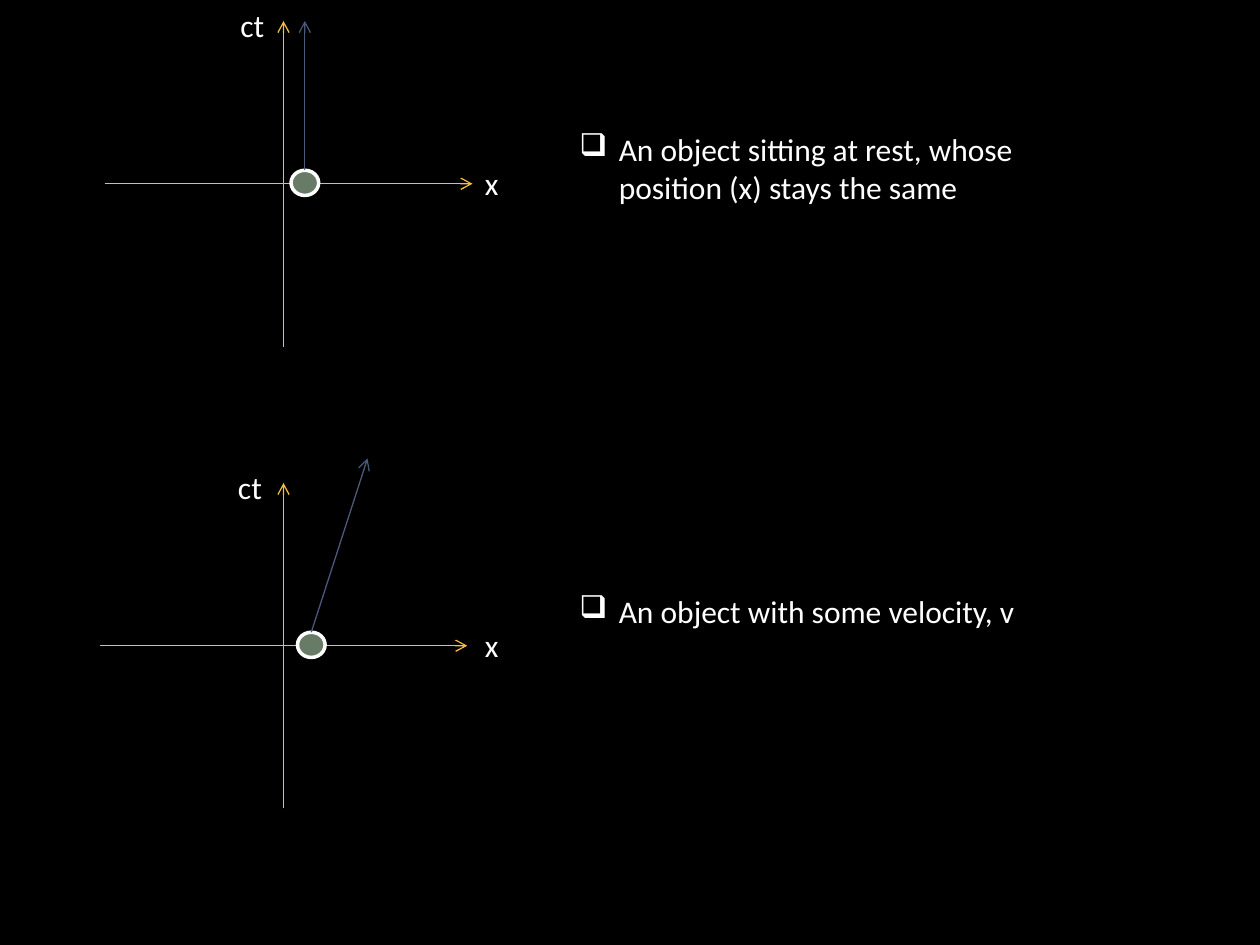
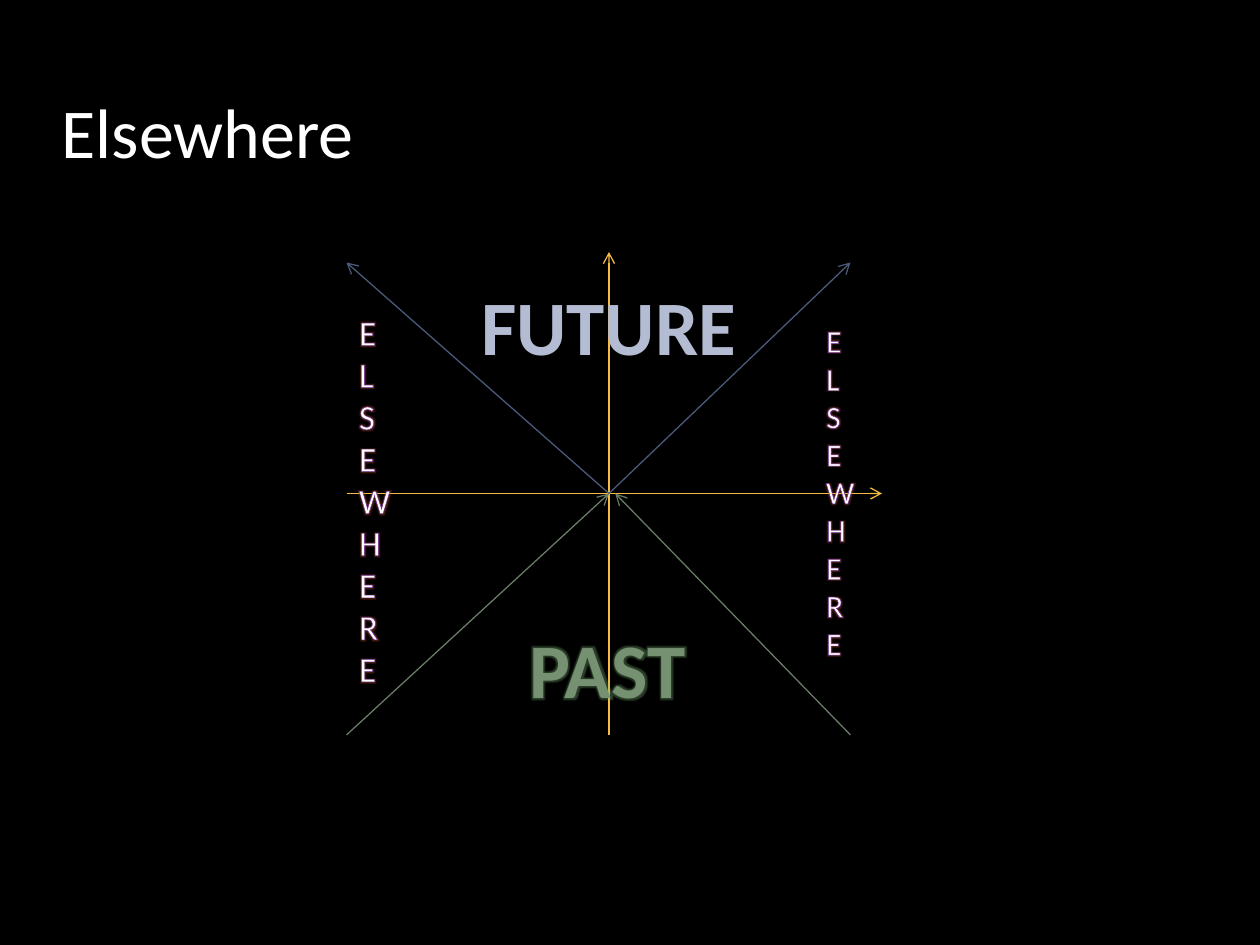
from lxml import etree
from pptx import Presentation
from pptx.dml.color import RGBColor
from pptx.enum.shapes import MSO_CONNECTOR, MSO_SHAPE
from pptx.enum.text import MSO_ANCHOR, MSO_AUTO_SIZE, PP_ALIGN
from pptx.oxml.ns import qn
from pptx.util import Pt

STRAIGHT = MSO_CONNECTOR.STRAIGHT
OVAL = MSO_SHAPE.OVAL
BOTTOM = MSO_ANCHOR.BOTTOM
NO_FIT, GROW = MSO_AUTO_SIZE.NONE, MSO_AUTO_SIZE.SHAPE_TO_FIT_TEXT
LEFT, CENTER = PP_ALIGN.LEFT, PP_ALIGN.CENTER

FONT = "Calibri"
COLORS = {
    "space": "000000",
    "text": "FFFFFF",
    "axis": "F7BD40",
    "future": "4A5A7A",
    "past": "687B66",
    "future_edge": "445476",
    "elsewhere_edge": "7030A0",
    "elsewhere_glow": "D0512A",
    "past_glow": "7FB878",
}
FUTURE_STOPS = [(0, "CACFDC"), (9, "B4BCD3"), (50, "0D2554"), (79, "B4BCD3"), (100, "CACFDC")]
PAST_STOPS = [(0, "2F422D"), (78, "759172"), (100, "F2F5F2")]


def rgb(name):
    """Return the named colour."""
    return RGBColor.from_string(COLORS[name])


def child(parent, tag, **attributes):
    """Append a drawing element with the given attributes."""
    return etree.SubElement(parent, qn(tag), {key: str(value) for key, value in attributes.items()})


def decorate(font_xml, stops, edge, glow):
    """Give letters an outline, a gradient and a glow, in schema order."""
    parts = []
    if edge:
        name, width = edge
        outline = child(font_xml, "a:ln", w=Pt(width))
        child(child(outline, "a:solidFill"), "a:srgbClr", val=COLORS[name])
        parts.append(outline)
    if stops:
        font_xml.remove(font_xml.find(qn("a:solidFill")))
        gradient = child(font_xml, "a:gradFill")
        stop_list = child(gradient, "a:gsLst")
        for percent, color in stops:
            child(child(stop_list, "a:gs", pos=percent * 1000), "a:srgbClr", val=color)
        child(gradient, "a:lin", ang=90 * 60000, scaled=0)
        parts.append(gradient)
    else:
        parts.append(font_xml.find(qn("a:solidFill")))
    if glow:
        effects = child(font_xml, "a:effectLst")
        halo = child(child(effects, "a:glow", rad=Pt(4)), "a:srgbClr", val=COLORS[glow])
        child(halo, "a:alpha", val=35000)
        parts.append(effects)
    for position, part in enumerate(parts):
        font_xml.insert(position, part)


def write(frame, text, size=18, bold=False, align=LEFT, before=0, bullet=None,
          stops=None, edge=None, glow=None):
    """Fill a text frame and format every paragraph alike."""
    frame.word_wrap = True
    frame.text = text
    for paragraph in frame.paragraphs:
        paragraph.alignment = align
        paragraph.space_before = Pt(before)
        run = paragraph.runs[0]
        run.font.name, run.font.size, run.font.bold = FONT, Pt(size), bold
        run.font.color.rgb = rgb("text")
        decorate(run.font._element, stops, edge, glow)
        if bullet:
            properties = paragraph._p.get_or_add_pPr()
            properties.set("marL", str(Pt(22.5)))
            properties.set("indent", str(-Pt(22.5)))
            child(properties, "a:buChar", char=bullet)


def label(slide, left, top, width, height, text, **style):
    """Add a text box that grows with its text."""
    frame = slide.shapes.add_textbox(Pt(left), Pt(top), Pt(width), Pt(height)).text_frame
    write(frame, text, **style)
    frame.auto_size = GROW


def arrow(slide, start, end, color):
    """Draw an arrow between two points and return it."""
    line = slide.shapes.add_connector(STRAIGHT, *map(Pt, (*start, *end)))
    line.line.color.rgb = rgb(color)
    line.line.width = Pt(0.75)
    child(line.line._get_or_add_ln(), "a:tailEnd", type="arrow")
    child(line._element.spPr, "a:effectLst")
    return line


def axes(slide, origin, left, right, top, bottom):
    """Draw the time axis and the space axis through an origin."""
    x, y = origin
    arrow(slide, (x, bottom), (x, top), "axis")
    arrow(slide, (left, y), (right, y), "axis")


def worldline_diagram(slide, top, axis_left, ct_left, ball_left, tip, note, note_size):
    """Draw an object's worldline on its axes, with a note beside it."""
    axes(slide, (162, top + 105), axis_left, axis_left + 210, top + 12, top + 198)
    label(slide, ct_left, top, 32, 29, "ct")
    label(slide, 270, top + 90, 24, 29, "x")
    ball = slide.shapes.add_shape(OVAL, Pt(ball_left), Pt(top + 97.3), Pt(15.8), Pt(14.4))
    ball.shadow.inherit = False
    ball.fill.solid()
    ball.fill.fore_color.rgb = rgb("past")
    ball.line.color.rgb = rgb("text")
    ball.line.width = Pt(2)
    tip_x, tip_y = tip
    start = (ball_left + 7.9, top + 97.3)
    arrow(slide, start, (tip_x, top + tip_y), "future").begin_connect(ball, 0)
    label(slide, 324, top + 71, *note_size, note, bullet="❑")


def light_cone(slide, left, top, width, height):
    """Draw the light cone with its future, past and elsewhere regions."""
    here_x, here_y = left + 150, top + height / 2
    right, bottom = left + 288, top + height
    axes(slide, (here_x, here_y), left, left + width, top, bottom)
    for edge in (right, left):
        arrow(slide, (here_x, here_y), (edge, top + 6), "future")
    for edge, meeting in ((left, here_x), (right, here_x + 3.6)):
        arrow(slide, (edge, bottom), (meeting, here_y), "past")
    label(slide, left + 54, top + 11.5, 192, 60.5, "FUTURE", size=44, bold=True,
          align=CENTER, stops=FUTURE_STOPS, edge=("future_edge", 0.83))
    label(slide, left + 75, top + 207.4, 148, 60.5, "PAST", size=44, bold=True,
          align=CENTER, stops=PAST_STOPS, glow="past_glow")
    letters = "\n".join("ELSEWHERE")
    for offset_x, offset_y, high, size in ((0, 30, 225, 20), (267, 36, 204, 18)):
        label(slide, left + offset_x, top + offset_y, 24, high, letters, size=size,
              edge=("elsewhere_edge", 1.45), glow="elsewhere_glow")


def worldlines_slide(deck):
    """Build the slide that compares rest and motion."""
    slide = deck.slides.add_slide(deck.slide_layouts[6])
    worldline_diagram(slide, 0, 60, 130.3, 166.3, (174.2, 12),
                      "An object sitting at rest, whose position (x) stays the same", (312, 51))
    worldline_diagram(slide, 264, 57, 128.9, 170, (210, -2),
                      "An object with some velocity, v", (276, 29))


def elsewhere_slide(deck):
    """Build the titled slide with the light cone."""
    slide = deck.slides.add_slide(deck.slide_layouts[5])
    title = slide.shapes.title
    title.left, title.top, title.width, title.height = map(Pt, (28, 18, 605, 84))
    write(title.text_frame, "Elsewhere", size=40, before=4)
    title.text_frame.vertical_anchor = BOTTOM
    title.text_frame.auto_size = NO_FIT
    light_cone(slide, 198, 144, 306, 276)


def main():
    """Build and save the deck."""
    deck = Presentation()
    deck.slide_width, deck.slide_height = Pt(720), Pt(540)
    backdrop = deck.slide_master.background.fill
    backdrop.solid()
    backdrop.fore_color.rgb = rgb("space")
    worldlines_slide(deck)
    elsewhere_slide(deck)
    deck.save("out.pptx")


if __name__ == "__main__":
    main()
